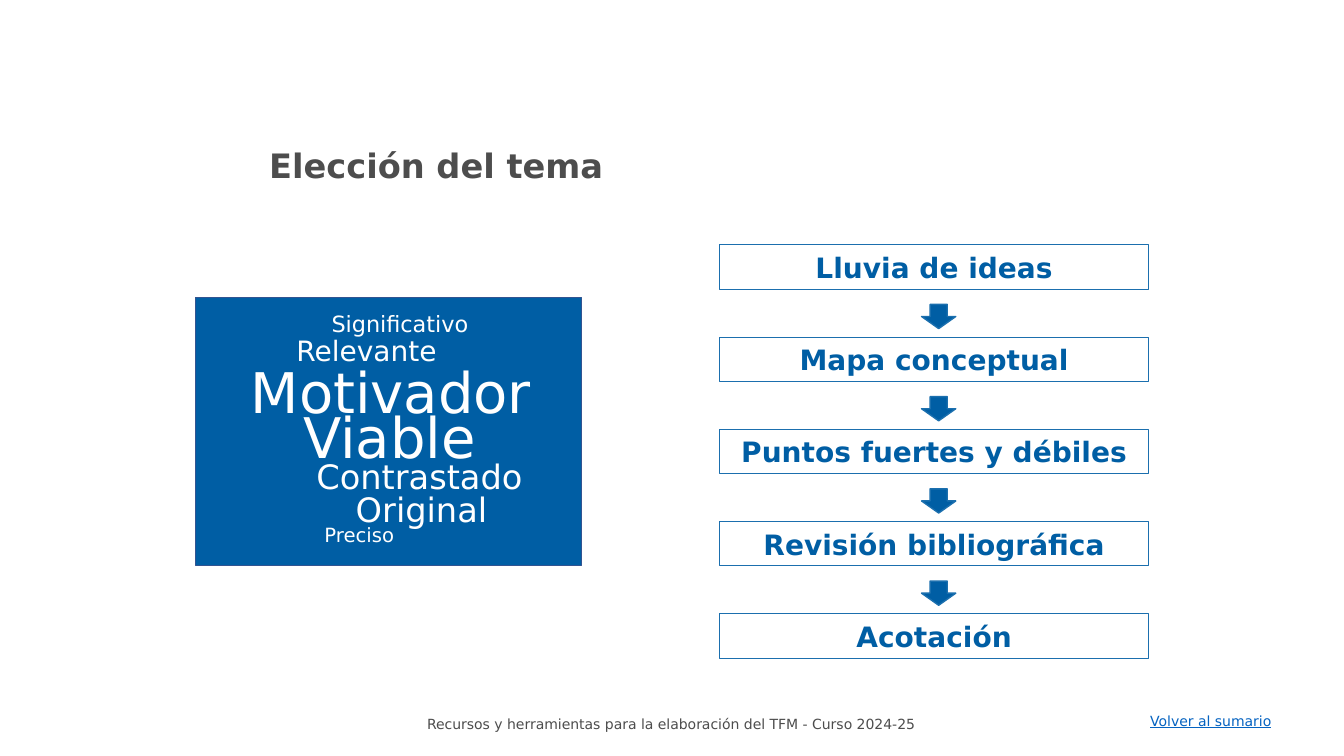
from pptx import Presentation, util as u
from pptx.dml.color import RGBColor
from pptx.enum import shapes, text

BLUE = RGBColor(0x00, 0x5E, 0xA4)
STEP_EDGE = RGBColor(0x1B, 0x6F, 0xAE)
CLOUD_EDGE = RGBColor(0x32, 0x54, 0x91)
LINK = RGBColor(0x05, 0x63, 0xC1)
GREY = RGBColor(0x4D, 0x4D, 0x4D)
WHITE = RGBColor(0xFF, 0xFF, 0xFF)
FONT = "DejaVu Sans"

TITLE = "Elección del tema"
FOOTER = "Recursos y herramientas para la elaboración del TFM - Curso 2024-25"
BACK = "Volver al sumario"
STEPS = [
    "Lluvia de ideas",
    "Mapa conceptual",
    "Puntos fuertes y débiles",
    "Revisión bibliográfica",
    "Acotación",
]
WORDS = [
    ("Significativo", 16, (3.19, 3.03, 1.76, 0.37)),
    ("Relevante", 20, (2.84, 3.26, 1.81, 0.44)),
    ("Motivador", 40, (2.39, 3.49, 3.01, 0.77)),
    ("Viable", 40, (2.91, 3.94, 2.57, 0.77)),
    ("Contrastado", 24, (3.04, 4.47, 2.73, 0.5)),
    ("Original", 24, (3.43, 4.8, 1.85, 0.5)),
    ("Preciso", 14, (3.12, 5.13, 1.8, 0.34)),
]
CLOUD = (1.94, 2.95, 3.83, 2.66)
STEP_LEFT, STEP_WIDTH, STEP_HEIGHT = 7.14, 4.25, 0.44
FIRST_TOP, LAST_TOP = 2.43, 6.09
ARROW_LEFT, ARROW_DROP, ARROW_WIDTH, ARROW_HEIGHT = 9.14, 0.59, 0.34, 0.24


def inches(area):
    return [u.Inches(length) for length in area]


def write(box, words, size, color, bold=False, align=text.PP_ALIGN.LEFT, wrap=True):
    frame = box.text_frame
    frame.word_wrap = wrap
    frame.vertical_anchor = text.MSO_ANCHOR.MIDDLE
    frame.text = words
    para = frame.paragraphs[0]
    para.alignment = align
    font = para.font
    font.name, font.size, font.bold = FONT, u.Pt(size), bold
    font.color.rgb = color
    return font


def add_shape(parent, kind, area, edge, weight, fill=None):
    shape = parent.shapes.add_shape(kind, *inches(area))
    shape.shadow.inherit = False
    if fill is None:
        shape.fill.background()
    else:
        shape.fill.solid()
        shape.fill.fore_color.rgb = fill
    shape.line.color.rgb = edge
    shape.line.width = u.Pt(weight)
    return shape


def add_text(parent, area, *content, **style):
    return write(parent.shapes.add_textbox(*inches(area)), *content, **style)


def add_steps(page):
    group = page.shapes.add_group_shape()
    pitch = (LAST_TOP - FIRST_TOP) / (len(STEPS) - 1)
    for row, step in enumerate(STEPS):
        top = FIRST_TOP + row * pitch
        box = add_shape(group, shapes.MSO_SHAPE.RECTANGLE,
                        (STEP_LEFT, top, STEP_WIDTH, STEP_HEIGHT), STEP_EDGE, 0.75)
        write(box, step, 20, BLUE, bold=True, align=text.PP_ALIGN.CENTER)
        if row < len(STEPS) - 1:
            add_shape(group, shapes.MSO_SHAPE.DOWN_ARROW,
                      (ARROW_LEFT, top + ARROW_DROP, ARROW_WIDTH, ARROW_HEIGHT),
                      STEP_EDGE, 1, BLUE)


def add_cloud(page):
    group = page.shapes.add_group_shape()
    add_shape(group, shapes.MSO_SHAPE.RECTANGLE, CLOUD, CLOUD_EDGE, 1, BLUE)
    for word, size, area in WORDS:
        add_text(group, area, word, size, WHITE)


def main():
    deck = Presentation()
    deck.slide_width, deck.slide_height = inches((13.33, 7.5))
    page = deck.slides.add_slide(deck.slide_layouts[5])
    title = page.shapes.title
    title.left, title.top, title.width, title.height = inches((2.57, 1.39, 8.35, 0.5))
    write(title, TITLE, 24, GREY, bold=True)
    add_text(page, (2.68, 7.05, 7.95, 0.27), FOOTER, 10, GREY,
             align=text.PP_ALIGN.CENTER)
    back = add_text(page, (11.31, 7.02, 1.44, 0.27), BACK, 10, LINK, wrap=False)
    back.underline = True
    add_steps(page)
    add_cloud(page)
    deck.save("out.pptx")


if __name__ == "__main__":
    main()
